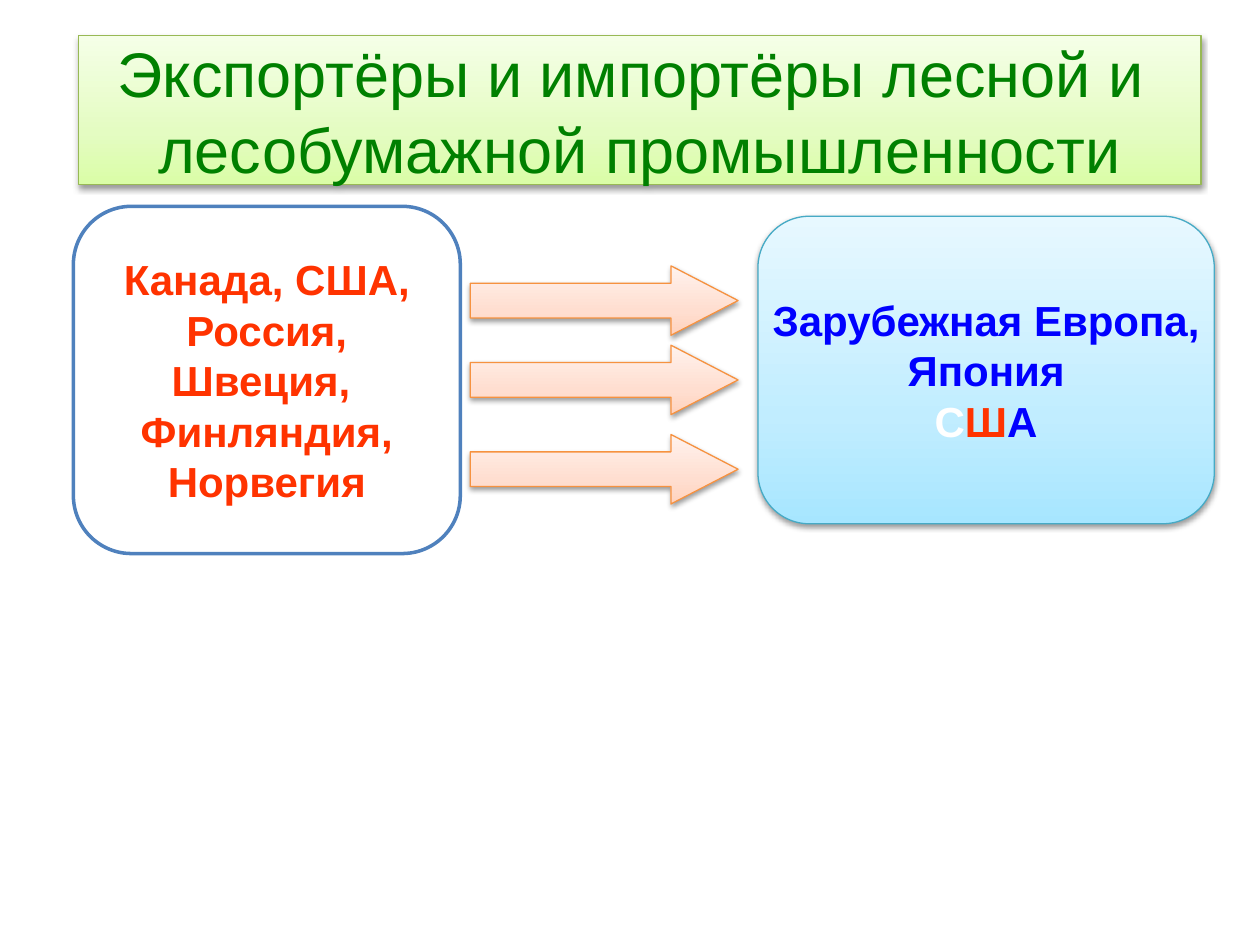
"""Build a slide on exporters and importers of the timber and paper industry."""
from dataclasses import dataclass
from typing import Optional

from lxml import etree
from pptx import Presentation
from pptx import util as u
from pptx.dml.color import RGBColor
from pptx.enum import shapes, text
from pptx.oxml import ns


@dataclass(frozen=True)
class Theme:
    font: str = "Arial"
    title_size: int = 36
    body_size: int = 24
    white: str = "FFFFFF"
    green: str = "008000"
    red: str = "FF3300"
    blue: str = "0000FF"
    outline: str = "4F81BD"
    green_line: str = "98B955"
    aqua_line: str = "46AAC5"
    orange_line: str = "F69240"
    green_fill: tuple[str, ...] = ("DAFDA7", "E4FCC2", "F5FFE7")
    aqua_fill: tuple[str, ...] = ("A7E6FF", "C1EDFF", "E7F8FF")
    orange_fill: tuple[str, ...] = ("FFD2BD", "FFDED0", "FFF2ED")
    stops: tuple[int, ...] = (0, 35, 100)


@dataclass(frozen=True)
class Block:
    kind: shapes.MSO_SHAPE
    left: float
    top: float
    width: float
    height: float
    fill: tuple[str, ...]
    line: str
    line_width: float = 0.75
    adjustments: tuple[float, ...] = ()


THEME = Theme()


def add_child(parent, tag: str, **attributes):
    return etree.SubElement(parent, ns.qn(tag), attributes)


def set_gradient(shape, colours: tuple[str, ...]) -> None:
    shape.fill.gradient()
    shape.fill.gradient_angle = 90
    stop_list = shape._element.spPr.find(f".//{ns.qn('a:gsLst')}")
    for stop in list(stop_list):
        stop_list.remove(stop)
    for position, colour in zip(THEME.stops, colours):
        stop = add_child(stop_list, "a:gs", pos=str(position * 1000))
        add_child(stop, "a:srgbClr", val=colour)


def add_shadow(shape) -> None:
    effects = shape._element.spPr.find(ns.qn("a:effectLst"))
    shadow = add_child(effects, "a:outerShdw", blurRad="40000", dist="20000",
                       dir="5400000", rotWithShape="0")
    colour = add_child(shadow, "a:srgbClr", val="000000")
    add_child(colour, "a:alpha", val="38000")


def add_block(slide, block: Block):
    shape = slide.shapes.add_shape(block.kind, u.Cm(block.left), u.Cm(block.top),
                                   u.Cm(block.width), u.Cm(block.height))
    for index, value in enumerate(block.adjustments):
        shape.adjustments[index] = value
    shape.line.color.rgb = RGBColor.from_string(block.line)
    shape.line.width = u.Pt(block.line_width)
    shape.shadow.inherit = False
    if len(block.fill) == 1:
        shape.fill.solid()
        shape.fill.fore_color.rgb = RGBColor.from_string(block.fill[0])
    else:
        set_gradient(shape, block.fill)
        add_shadow(shape)
    return shape


def write_text(shape, lines: list[str], *, size: int, colour: str, bold: bool = False,
               last_colours: Optional[tuple[str, ...]] = None) -> None:
    frame = shape.text_frame
    frame.word_wrap = False
    frame.vertical_anchor = text.MSO_ANCHOR.MIDDLE
    for index, line in enumerate(lines):
        paragraph = frame.add_paragraph() if index else frame.paragraphs[0]
        paragraph.alignment = text.PP_ALIGN.CENTER
        pieces = [(line, colour)]
        if last_colours and index == len(lines) - 1:
            pieces = list(zip(line, last_colours))
        for piece, piece_colour in pieces:
            run = paragraph.add_run()
            run.text = piece
            run.font.name = THEME.font
            run.font.size = u.Pt(size)
            run.font.bold = bold
            run.font.color.rgb = RGBColor.from_string(piece_colour)


def main() -> None:
    presentation = Presentation()
    presentation.slide_width, presentation.slide_height = u.Cm(25.4), u.Cm(19.05)
    slide = presentation.slides.add_slide(presentation.slide_layouts[6])
    kinds = shapes.MSO_SHAPE

    title = add_block(slide, Block(kinds.RECTANGLE, 1.58, 0.72, 22.63, 3.0,
                                   THEME.green_fill, THEME.green_line))
    write_text(title, ["Экспортёры и импортёры лесной и ", "лесобумажной промышленности"],
               size=THEME.title_size, colour=THEME.green)

    exporters = add_block(slide, Block(kinds.ROUNDED_RECTANGLE, 1.48, 4.16, 7.8, 7.0,
                                       (THEME.white,), THEME.outline, 2, (0.167,)))
    write_text(exporters, ["Канада, США,", "Россия,", "Швеция, ", "Финляндия,", "Норвегия"],
               size=THEME.body_size, colour=THEME.red, bold=True)

    importers = add_block(slide, Block(kinds.ROUNDED_RECTANGLE, 15.28, 4.36, 9.2, 6.2,
                                       THEME.aqua_fill, THEME.aqua_line,
                                       adjustments=(0.167,)))
    write_text(importers, ["Зарубежная Европа,", "Япония", "США"],
               size=THEME.body_size, colour=THEME.blue, bold=True,
               last_colours=(THEME.white, THEME.red, THEME.blue))

    for top in (5.36, 6.96, 8.76):
        add_block(slide, Block(kinds.RIGHT_ARROW, 9.48, top, 5.4, 1.4, THEME.orange_fill,
                               THEME.orange_line, adjustments=(0.5, 0.966)))

    presentation.save("out.pptx")


if __name__ == "__main__":
    main()
